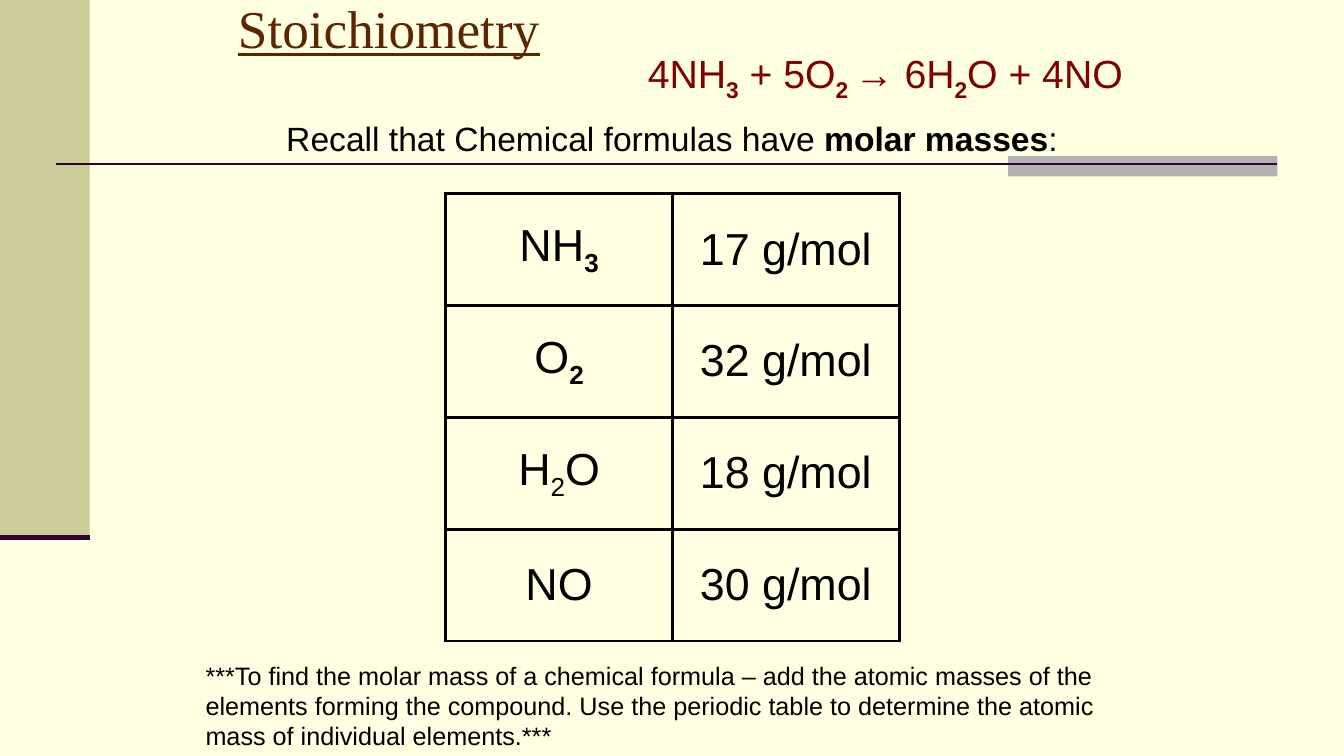
from pptx import Presentation
from pptx import util as u
from pptx.dml.color import RGBColor
from pptx.enum import shapes, text
from pptx.oxml.ns import qn
from lxml import etree

COLORS = {
    "cream": "FFFFE1",
    "olive": "CCCC99",
    "gray": "B2B2B2",
    "plum": "330033",
    "brown": "5E2600",
    "maroon": "800000",
    "black": "000000",
}
PLAIN, BOLD, SUB, BOLD_SUB = (False, False), (True, False), (False, True), (True, True)


def color(name):
    return RGBColor.from_string(COLORS[name])


class StoichiometrySlide:
    font = "Arial"

    def __init__(self, deck):
        self.slide = deck.slides.add_slide(deck.slide_layouts[1])
        background = self.slide.background.fill
        background.solid()
        background.fore_color.rgb = color("cream")

    def bar(self, fill, *box):
        bar = self.slide.shapes.add_shape(
            shapes.MSO_SHAPE.RECTANGLE, *map(u.Inches, box))
        bar.shadow.inherit = False
        bar.fill.solid()
        bar.fill.fore_color.rgb = color(fill)
        bar.line.fill.background()

    def rule(self, width, *ends):
        rule = self.slide.shapes.add_connector(
            shapes.MSO_CONNECTOR.STRAIGHT, *map(u.Inches, ends))
        rule.line.color.rgb = color("plum")
        rule.line.width = u.Pt(width)
        etree.SubElement(rule._element.spPr, qn("a:effectLst"))

    def wording(self, paragraph, runs, size, ink="black", font=None, align=text.PP_ALIGN.LEFT):
        paragraph.alignment = align
        paragraph.font.size = u.Pt(size)
        paragraph.font.name = font or self.font
        paragraph.font.color.rgb = color(ink)
        for words, (bold, subscript) in runs:
            run = paragraph.add_run()
            run.text = words
            if bold:
                run.font.bold = True
            if subscript:
                run.font._element.set("baseline", "-25000")

    def placeholder(self, index, box, margins, runs, size, **style):
        holder = self.slide.placeholders[index]
        holder.left, holder.top, holder.width, holder.height = map(u.Inches, box)
        frame = holder.text_frame
        frame.auto_size = text.MSO_AUTO_SIZE.NONE
        frame.vertical_anchor = text.MSO_ANCHOR.TOP
        (frame.margin_left, frame.margin_top,
         frame.margin_right, frame.margin_bottom) = map(u.Inches, margins)
        paragraph = frame.paragraphs[0]
        self.wording(paragraph, runs, size, **style)
        paragraph.line_spacing = 0.95
        paragraph.space_before = u.Pt(0)
        properties = paragraph._p.get_or_add_pPr()
        properties.set("marL", "0")
        properties.set("indent", "0")
        properties.insert_element_before(
            properties.makeelement(qn("a:buNone")), "a:tabLst", "a:defRPr", "a:extLst")
        return paragraph

    def textbox(self, box, lines, size, margin_top=0.05, **style):
        frame = self.slide.shapes.add_textbox(*map(u.Inches, box)).text_frame
        frame.word_wrap = True
        frame.margin_top = u.Inches(margin_top)
        for number, runs in enumerate(lines):
            paragraph = frame.add_paragraph() if number else frame.paragraphs[0]
            self.wording(paragraph, runs, size, **style)

    def border(self, cell, width):
        properties = cell._tc.get_or_add_tcPr()
        for position, side in enumerate(("lnL", "lnR", "lnT", "lnB")):
            edge = etree.Element(qn(f"a:{side}"), w=str(u.Pt(width)))
            fill = etree.SubElement(edge, qn("a:solidFill"))
            etree.SubElement(fill, qn("a:srgbClr"), val=COLORS["black"])
            properties.insert(position, edge)

    def table(self, box, rows, size):
        table = self.slide.shapes.add_table(
            len(rows), len(rows[0]), *map(u.Inches, box)).table
        table.first_row = table.horz_banding = False
        for row, entries in enumerate(rows):
            for column, runs in enumerate(entries):
                cell = table.cell(row, column)
                cell.fill.background()
                cell.vertical_anchor = text.MSO_ANCHOR.MIDDLE
                self.wording(cell.text_frame.paragraphs[0], runs, size,
                             align=text.PP_ALIGN.CENTER)
                self.border(cell, 2.25)


def main():
    deck = Presentation()
    deck.slide_width, deck.slide_height = u.Inches(13.33), u.Inches(7.5)
    page = StoichiometrySlide(deck)
    center = text.PP_ALIGN.CENTER

    page.bar("olive", 0, 0, 0.89, 5.33)
    page.bar("gray", 10, 1.55, 2.67, 0.2)
    page.rule(1.5, 0.56, 1.63, 12.67, 1.63)
    page.rule(3.5, 0, 5.33, 0.89, 5.33)

    title = page.placeholder(0, (2.34, 0, 9.33, 0.5), (0.02, 0, 0.02, 0),
                             [("Stoichiometry", PLAIN)], 38,
                             ink="brown", font="Times New Roman")
    title.font.underline = True
    page.placeholder(1, (1.83, 0.75, 9.67, 1.17), (0.1, 0.45, 0.1, 0.05),
                     [("Recall that Chemical formulas have ", PLAIN),
                      ("molar masses", BOLD), (":", PLAIN)], 24, align=center)

    reaction = [("4NH", PLAIN), ("3", BOLD_SUB), (" + 5O", PLAIN), ("2 ", BOLD_SUB),
                ("→ 6H", PLAIN), ("2", BOLD_SUB), ("O + 4NO", PLAIN)]
    page.textbox((5.89, 0.44, 5.78, 0.58), [reaction], 28, ink="maroon", align=center)

    molar_masses = [
        ([("NH", PLAIN), ("3", BOLD_SUB)], 17),
        ([("O", PLAIN), ("2", BOLD_SUB)], 32),
        ([("H", PLAIN), ("2", SUB), ("O", PLAIN)], 18),
        ([("NO", PLAIN)], 30),
    ]
    page.table((4.42, 1.92, 4.5, 4.44),
               [(formula, [(f"{mass} g/mol", PLAIN)]) for formula, mass in molar_masses], 32)

    hint = [
        "***To find the molar mass of a chemical formula – add the atomic masses of the",
        "elements forming the compound. Use the periodic table to determine the atomic",
        "mass of individual elements.***",
    ]
    page.textbox((1.94, 6.19, 9.85, 1.31), [[(line, PLAIN)] for line in hint], 18,
                 margin_top=0.36)

    deck.save("out.pptx")


if __name__ == "__main__":
    main()
